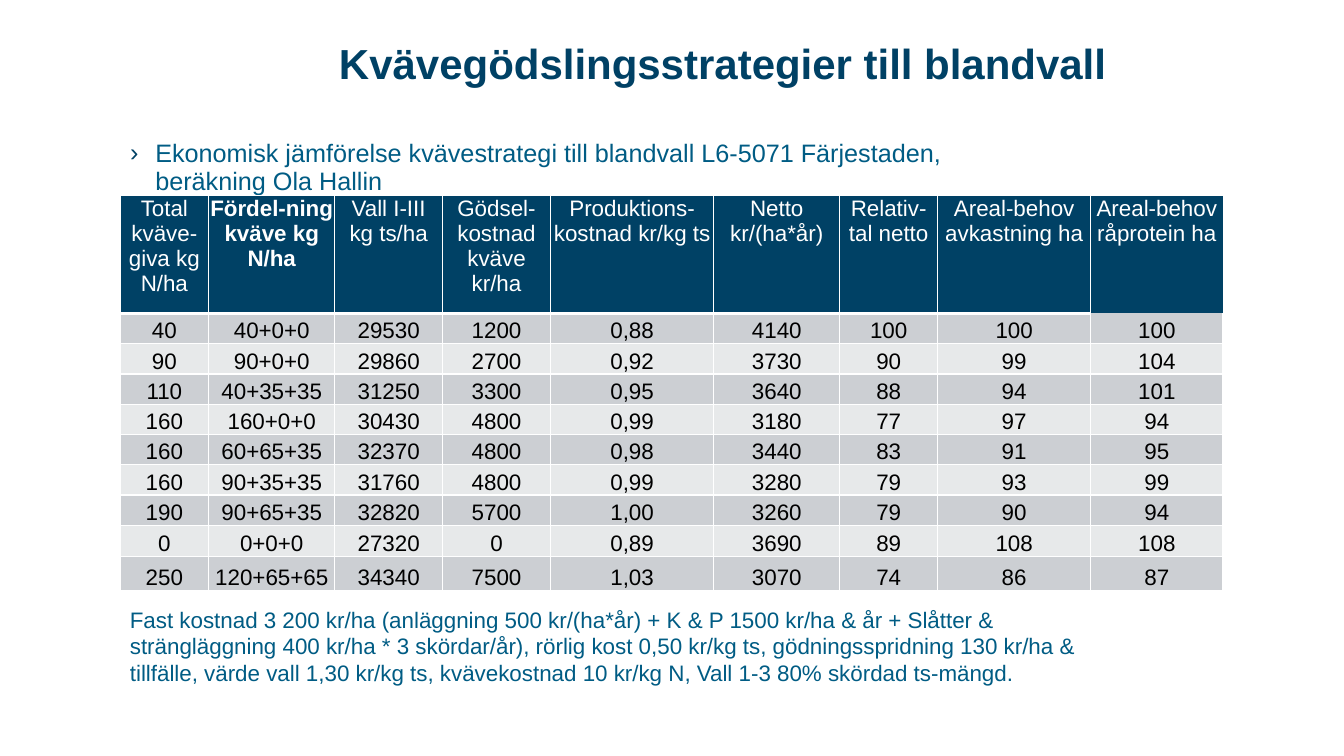
from lxml.etree import SubElement
from pptx import Presentation
from pptx.dml.color import RGBColor
from pptx.enum.text import MSO_ANCHOR, MSO_AUTO_SIZE, PP_ALIGN
from pptx.oxml import parse_xml
from pptx.oxml.ns import nsdecls, qn
from pptx.util import Inches, Pt

COLORS = {
    "navy": "004165",
    "blue": "005C84",
    "white": "FFFFFF",
    "black": "000000",
    "dark_band": "CCCFD3",
    "light_band": "E7E9EA",
}
COLUMN_WIDTHS = [0.88, 1.25, 1.07, 1.07, 1.62, 1.25, 0.97, 1.52, 1.31]
ROW_HEIGHTS = [1.17] + [0.3] * 7 + [0.31, 0.34]
HEADERS = [
    "Total kväve-giva kg N/ha",
    "Fördel-ning kväve kg N/ha",
    "Vall I-III\nkg ts/ha",
    "Gödsel-kostnad kväve kr/ha",
    "Produktions-kostnad kr/kg ts",
    "Netto kr/(ha*år)",
    "Relativ-tal netto",
    "Areal-behov avkastning ha",
    "Areal-behov råprotein ha",
]
STRATEGIES = [
    ["40", "40+0+0", "29530", "1200", "0,88", "4140", "100", "100", "100"],
    ["90", "90+0+0", "29860", "2700", "0,92", "3730", "90", "99", "104"],
    ["110", "40+35+35", "31250", "3300", "0,95", "3640", "88", "94", "101"],
    ["160", "160+0+0", "30430", "4800", "0,99", "3180", "77", "97", "94"],
    ["160", "60+65+35", "32370", "4800", "0,98", "3440", "83", "91", "95"],
    ["160", "90+35+35", "31760", "4800", "0,99", "3280", "79", "93", "99"],
    ["190", "90+65+35", "32820", "5700", "1,00", "3260", "79", "90", "94"],
    ["0", "0+0+0", "27320", "0", "0,89", "3690", "89", "108", "108"],
    ["250", "120+65+65", "34340", "7500", "1,03", "3070", "74", "86", "87"],
]
COST_NOTE = (
    "Fast kostnad 3 200 kr/ha (anläggning 500 kr/(ha*år) + K & P 1500 kr/ha & år "
    "+ Slåtter & strängläggning 400 kr/ha * 3 skördar/år), rörlig kost 0,50 kr/kg ts, "
    "gödningsspridning 130 kr/ha & tillfälle, värde vall 1,30 kr/kg ts, "
    "kvävekostnad 10 kr/kg N, Vall 1-3 80% skördad ts-mängd."
)


def set_attributes(target, values):
    for name, value in values.items():
        setattr(target, name, value)


def place(shape, box):
    names = ("left", "top", "width", "height")
    set_attributes(shape, dict(zip(names, map(Inches, box))))


def write_text(text_frame, text, color, size, bold=False, **paragraph_format):
    text_frame.text = text
    for paragraph in text_frame.paragraphs:
        set_attributes(paragraph, paragraph_format)
        for run in paragraph.runs:
            set_attributes(run.font, {"name": "Arial", "size": Pt(size), "bold": bold})
            run.font.color.rgb = RGBColor.from_string(COLORS[color])


def add_title(slide, box):
    title = slide.shapes.title
    place(title, box)
    set_attributes(title.text_frame, {
        "vertical_anchor": MSO_ANCHOR.MIDDLE,
        "auto_size": MSO_AUTO_SIZE.NONE,
        "word_wrap": True,
    })
    write_text(title.text_frame, "Kvävegödslingsstrategier till blandvall", "navy", 30,
               bold=True, alignment=PP_ALIGN.RIGHT, line_spacing=0.9)


def add_introduction(slide, box):
    body = slide.placeholders[1]
    place(body, box)
    set_attributes(body.text_frame, {"auto_size": MSO_AUTO_SIZE.NONE, "word_wrap": True})
    write_text(
        body.text_frame,
        "Ekonomisk jämförelse kvävestrategi till blandvall L6-5071 Färjestaden, "
        "\vberäkning Ola Hallin",
        "blue", 18, line_spacing=0.9, space_before=Pt(0))
    properties = body.text_frame.paragraphs[0]._p.get_or_add_pPr()
    properties.set("marL", str(Inches(0.25)))
    properties.set("indent", str(Inches(-0.25)))
    bullet_color = SubElement(properties, qn("a:buClr"))
    SubElement(bullet_color, qn("a:srgbClr"), val=COLORS["navy"])
    SubElement(properties, qn("a:buFont"), typeface="Arial")
    SubElement(properties, qn("a:buChar"), char="›")


def border_widths(row, column):
    widths = {"L": 1, "R": 1, "T": 1, "B": 3 if row == 0 else 1}
    if column == len(HEADERS) - 1:
        if row == 0:
            widths.update(R=0, T=0, B=0)
        elif row == 1:
            widths.update(T=0)
    return widths


def set_borders(cell, widths):
    properties = cell._tc.get_or_add_tcPr()
    for position, (side, width) in enumerate(widths.items()):
        paint = (f'<a:solidFill><a:srgbClr val="{COLORS["white"]}"/></a:solidFill>'
                 if width else "<a:noFill/>")
        line = f'<a:ln{side} {nsdecls("a")} w="{Pt(width)}">{paint}</a:ln{side}>'
        properties.insert(position, parse_xml(line))


def format_cell(cell, text, row, column):
    header = row == 0
    band = "navy" if header else "dark_band" if row % 2 else "light_band"
    set_attributes(cell, {
        "margin_left": Inches(0.01),
        "margin_top": Inches(0.01),
        "margin_right": Inches(0.01),
        "margin_bottom": Inches(0),
        "vertical_anchor": MSO_ANCHOR.TOP if header else MSO_ANCHOR.BOTTOM,
    })
    cell.fill.solid()
    cell.fill.fore_color.rgb = RGBColor.from_string(COLORS[band])
    write_text(cell.text_frame, text, "white" if header else "black", 16,
               bold=header and column == 1, alignment=PP_ALIGN.CENTER)
    set_borders(cell, border_widths(row, column))


def add_strategy_table(slide, box):
    rows = [HEADERS] + STRATEGIES
    table = slide.shapes.add_table(len(rows), len(HEADERS), *map(Inches, box)).table
    set_attributes(table, {"first_row": False, "horz_banding": False})
    for column, width in zip(table.columns, COLUMN_WIDTHS):
        column.width = Inches(width)
    for row, height in zip(table.rows, ROW_HEIGHTS):
        row.height = Inches(height)
    for row_index, texts in enumerate(rows):
        for column_index, text in enumerate(texts):
            format_cell(table.cell(row_index, column_index), text, row_index, column_index)


def add_cost_note(slide, box):
    note = slide.shapes.add_textbox(*map(Inches, box))
    set_attributes(note.text_frame, {
        "word_wrap": True,
        "auto_size": MSO_AUTO_SIZE.SHAPE_TO_FIT_TEXT,
    })
    write_text(note.text_frame, COST_NOTE, "blue", 16)


def main():
    presentation = Presentation()
    set_attributes(presentation, {"slide_width": Inches(13.33), "slide_height": Inches(7.5)})
    slide = presentation.slides.add_slide(presentation.slide_layouts[1])
    left = 1.19
    add_title(slide, (2.26, 0.36, 8.82, 0.59))
    add_introduction(slide, (left, 1.35, 9.88, 0.59))
    add_strategy_table(slide, (left, 1.94, sum(COLUMN_WIDTHS), sum(ROW_HEIGHTS)))
    add_cost_note(slide, (left, 5.96, 9.77, 0.91))
    presentation.save("out.pptx")


if __name__ == "__main__":
    main()
